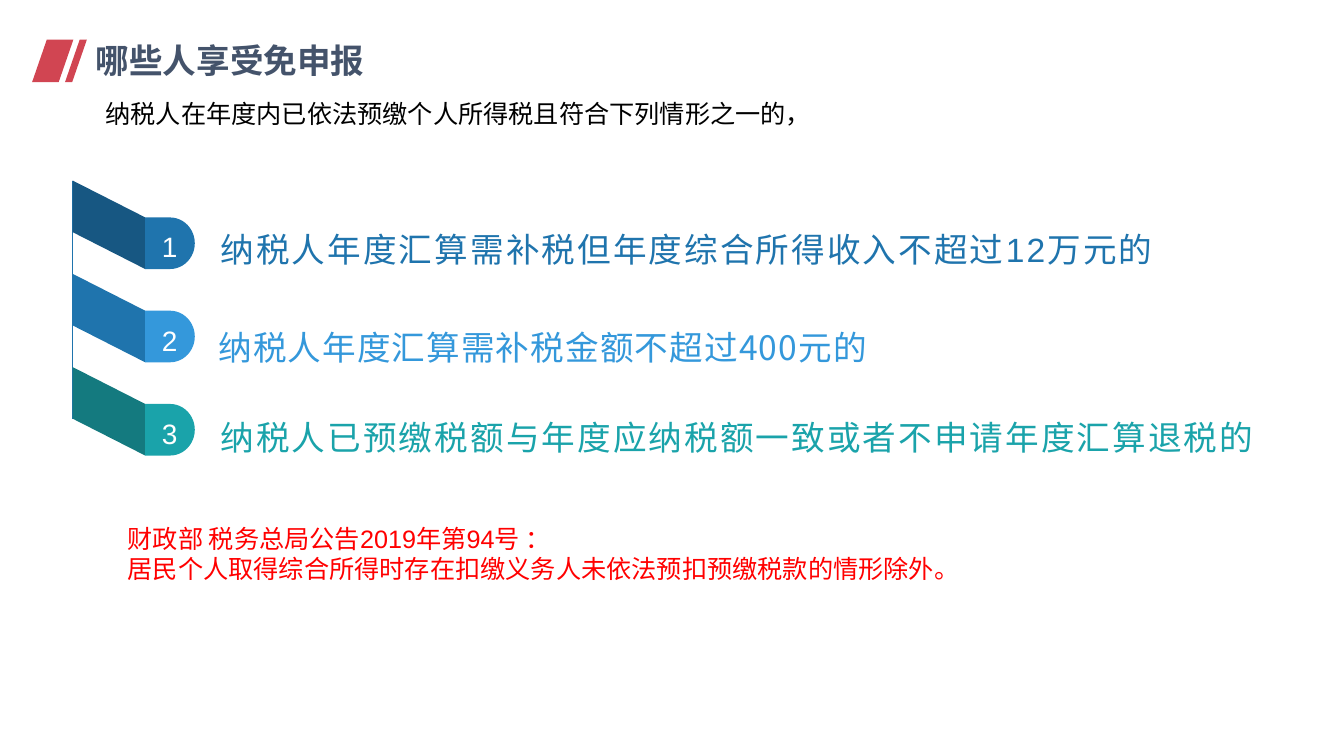
import dataclasses

import lxml.etree
import pptx
import pptx.dml.color
import pptx.enum.shapes
import pptx.enum.text
import pptx.oxml.ns
import pptx.util

Cm = pptx.util.Cm
Pt = pptx.util.Pt
ANCHOR = pptx.enum.text.MSO_ANCHOR
ALIGN = pptx.enum.text.PP_ALIGN

# Content
TITLE = "哪些人享受免申报"
INTRO = "纳税人在年度内已依法预缴个人所得税且符合下列情形之一的，"
NOTICE = [
    "财政部 税务总局公告2019年第94号 ：",
    "居民个人取得综合所得时存在扣缴义务人未依法预扣预缴税款的情形除外。",
]
NOTO = "Noto Sans CJK SC"
CASES = [  # text, fold colour, tab colour, box (left, top, width, height), format
    ("纳税人年度汇算需补税但年度综合所得收入不超过12万元的", "175782", "1F74AD",
     (5.31, 5.49, 24.18, 1.35), {"spacing": 1.5, "line": 1.2, "anchor": ANCHOR.MIDDLE}),
    ("纳税人年度汇算需补税金额不超过400元的", "1F74AD", "3498DB",
     (5.31, 7.62, 22.4, 1.75),
     {"spacing": 0.8, "line": 1.5, "before": 5, "font": NOTO, "insets": (0.2, 0.1, 0.2, 0.1)}),
    ("纳税人已预缴税额与年度应纳税额一致或者不申请年度汇算退税的", "147A7F", "1AA3AA",
     (5.31, 10.19, 26.9, 1.42), {"spacing": 1.5, "line": 1.2, "anchor": ANCHOR.MIDDLE}),
]


@dataclasses.dataclass(frozen=True)
class Theme:
    accent: str = "D14552"
    title: str = "44536B"
    spine: str = "1F74AD"
    body: str = "000000"
    notice: str = "FF0000"
    white: str = "FFFFFF"
    heading_size: int = 24
    number_size: int = 20
    body_size: int = 18


THEME = Theme()

# Ribbon geometry in cm
RIBBON_LEFT, RIBBON_TOP, RIBBON_STEP = 1.83, 4.55, 2.35
FOLD_WIDTH, FOLD_DROP, BAND_HEIGHT, TAB_WIDTH = 1.83, 0.93, 1.3, 1.25


def rgb(value):
    return pptx.dml.color.RGBColor.from_string(value)


def write(shape, paragraphs, color, size, font="Arial", bold=False, spacing=0, line=1.0,
          before=0, align=ALIGN.LEFT, anchor=ANCHOR.TOP, insets=(0.25, 0.13, 0.25, 0.13)):
    frame = shape.text_frame
    frame.word_wrap = True
    frame.auto_size = pptx.enum.text.MSO_AUTO_SIZE.NONE
    frame.vertical_anchor = anchor
    (frame.margin_left, frame.margin_top,
     frame.margin_right, frame.margin_bottom) = map(Cm, insets)
    for index, text in enumerate(paragraphs):
        para = frame.add_paragraph() if index else frame.paragraphs[0]
        para.alignment = align
        para.line_spacing = line
        para.space_before = Pt(before)
        span = para.add_run()
        span.text = text
        span.font.name = font
        span.font.size = Pt(size)
        span.font.bold = bold
        span.font.color.rgb = rgb(color)
        properties = span.font._element
        if spacing:
            properties.set("spc", str(round(spacing * 100)))
        east_asian = lxml.etree.Element(pptx.oxml.ns.qn("a:ea"), typeface=NOTO)
        properties.find(pptx.oxml.ns.qn("a:latin")).addnext(east_asian)


def add_text(page, box, paragraphs, color, size, **style):
    shape = page.shapes.add_textbox(*map(Cm, box))
    write(shape, paragraphs, color, size, **style)


def paint(shape, color):
    shape.shadow.inherit = False
    shape.fill.solid()
    shape.fill.fore_color.rgb = rgb(color)
    shape.line.fill.background()


def add_polygon(page, points, color):
    corners = [(Cm(x), Cm(y)) for x, y in points]
    builder = page.shapes.build_freeform(*corners[0])
    builder.add_line_segments(corners[1:], close=True)
    paint(builder.convert_to_shape(), color)


def add_spine(page):
    bottom = RIBBON_TOP + (len(CASES) - 1) * RIBBON_STEP + BAND_HEIGHT
    spine = page.shapes.add_connector(
        pptx.enum.shapes.MSO_CONNECTOR.STRAIGHT,
        Cm(RIBBON_LEFT), Cm(RIBBON_TOP), Cm(RIBBON_LEFT), Cm(bottom))
    spine.line.color.rgb = rgb(THEME.spine)
    spine.line.width = Pt(0.5)
    lxml.etree.SubElement(spine._element.spPr, pptx.oxml.ns.qn("a:effectLst"))


def add_case(page, index, case):
    text, fold_color, tab_color, box, style = case
    top = RIBBON_TOP + index * RIBBON_STEP
    tab_left = RIBBON_LEFT + FOLD_WIDTH
    tab_top = top + FOLD_DROP
    add_polygon(page, [(RIBBON_LEFT, top), (tab_left, tab_top),
                       (tab_left, tab_top + BAND_HEIGHT), (RIBBON_LEFT, top + BAND_HEIGHT)],
                fold_color)
    tab = page.shapes.add_shape(
        pptx.enum.shapes.MSO_SHAPE.FLOWCHART_DELAY,
        Cm(tab_left), Cm(tab_top), Cm(TAB_WIDTH), Cm(BAND_HEIGHT))
    paint(tab, tab_color)
    write(tab, [str(index + 1)], THEME.white, THEME.number_size, spacing=3, line=1.2,
          align=ALIGN.CENTER, anchor=ANCHOR.MIDDLE, insets=(0.17, 0, 0, 0))
    add_text(page, box, [text], tab_color, THEME.heading_size, **style)


def main():
    deck = pptx.Presentation()
    deck.slide_width, deck.slide_height = Cm(33.87), Cm(19.05)
    page = deck.slides.add_slide(deck.slide_layouts[5])

    # Title and its slanted marks
    title = page.shapes.title
    title.left, title.top, title.width, title.height = map(Cm, (2.41, 0.97, 10.87, 1.07))
    write(title, [TITLE], THEME.title, THEME.heading_size, font=NOTO, bold=True,
          before=1, insets=(0, 0.03, 0, 0))
    for left, width in ((0.81, 0.67), (1.64, 0.18)):
        add_polygon(page, [(left + 0.37, 1), (left + 0.37 + width, 1),
                           (left + width, 2.07), (left, 2.07)], THEME.accent)

    # Folded ribbon with the three cases
    add_spine(page)
    for index, case in enumerate(CASES):
        add_case(page, index, case)

    # Introduction and notice
    add_text(page, (2.41, 2.36, 18.08, 1.02), [INTRO], THEME.body, THEME.body_size)
    add_text(page, (2.97, 13.06, 28.58, 1.78), NOTICE, THEME.notice, THEME.body_size)

    deck.save("out.pptx")


if __name__ == "__main__":
    main()
